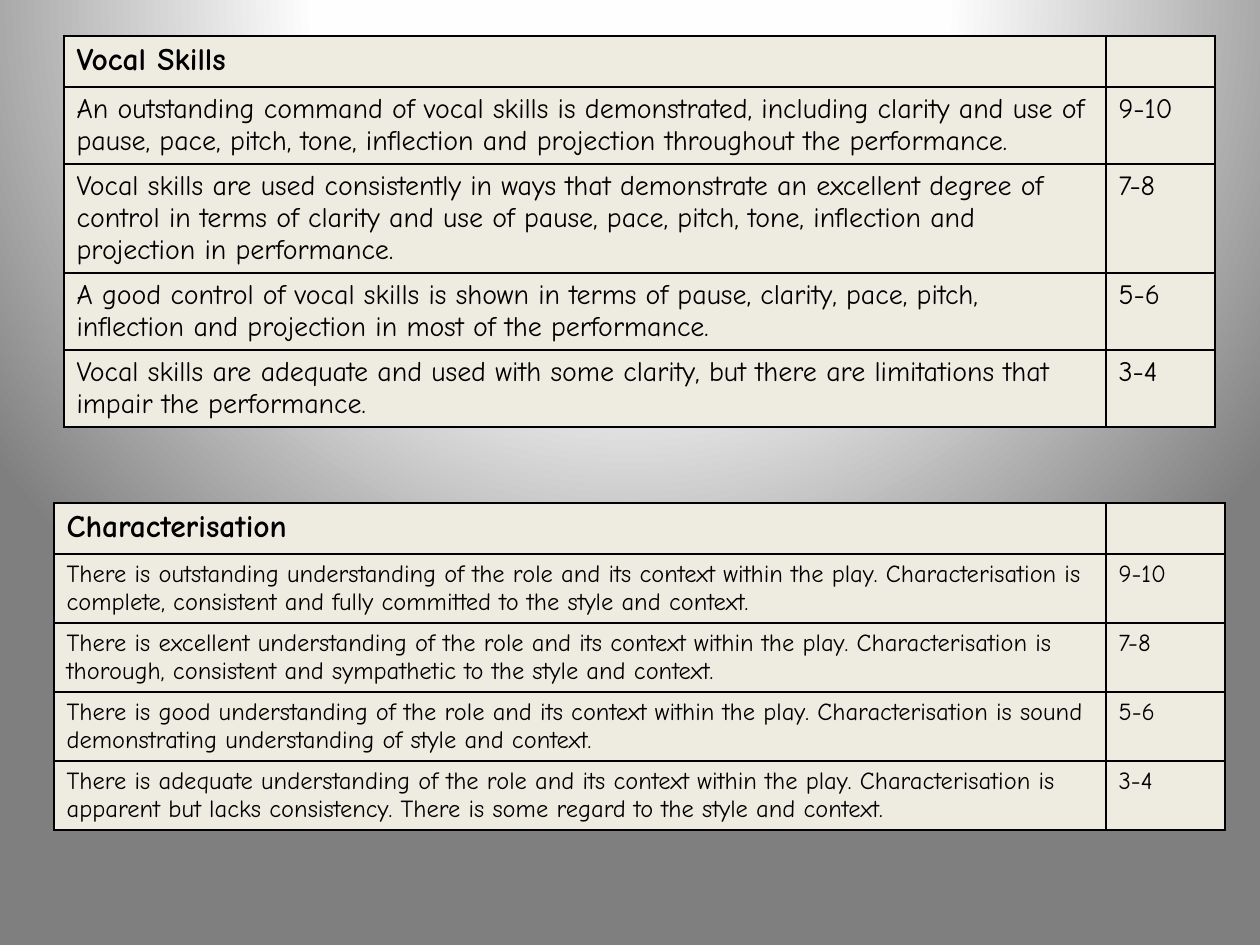
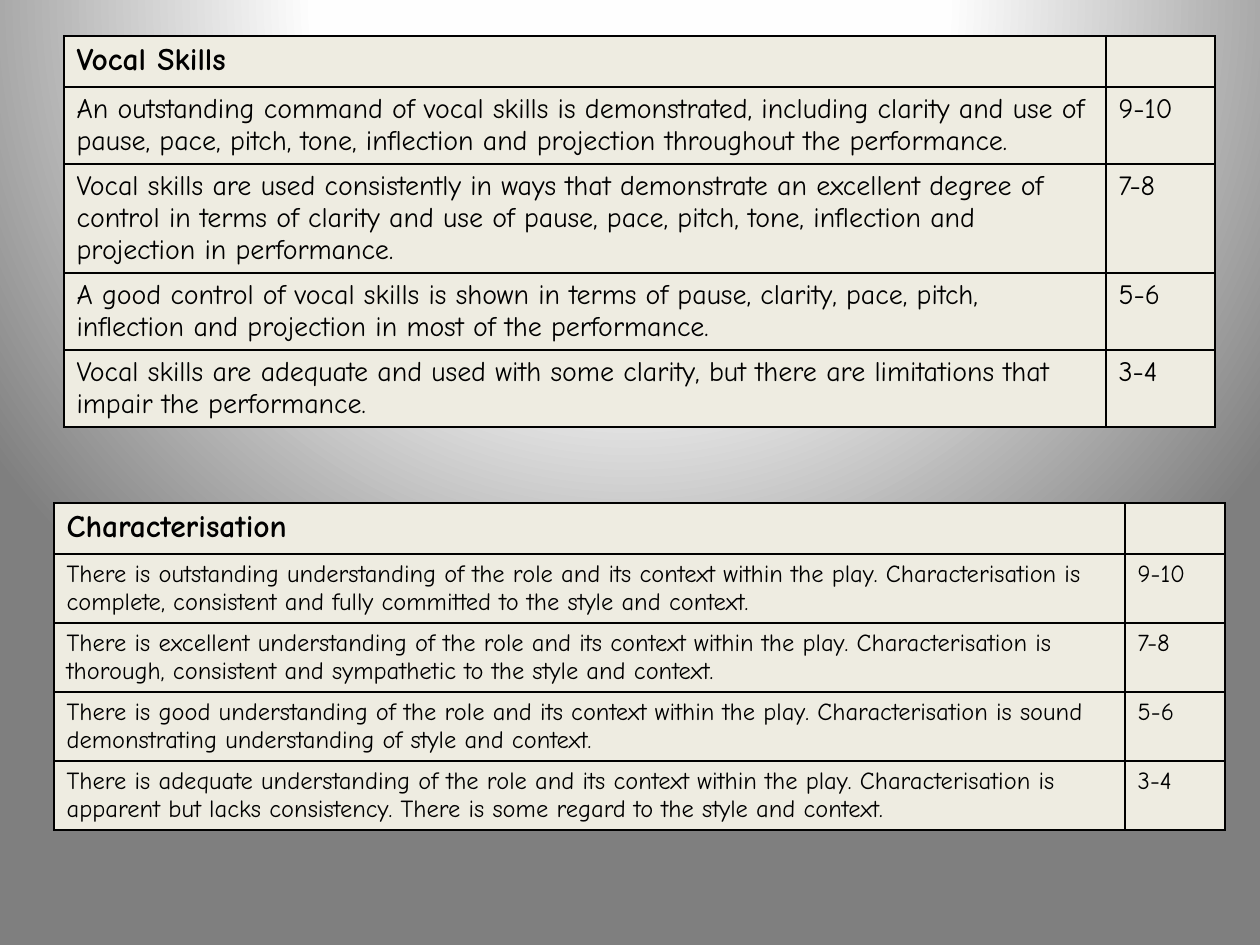
from pptx import Presentation
from pptx.dml.color import RGBColor
from pptx.oxml import parse_xml
from pptx.oxml.ns import nsdecls
from pptx.util import Emu, Pt

VOCAL = ("Vocal Skills", [
    ("An outstanding command of vocal skills is demonstrated, including clarity and use of "
     "pause, pace, pitch, tone, inflection and projection throughout the performance.", "9-10"),
    ("Vocal skills are used consistently in ways that demonstrate an excellent degree of "
     "control in terms of clarity and use of pause, pace, pitch, tone, inflection and "
     "projection in performance.", "7-8"),
    ("A good control of vocal skills is shown in terms of pause, clarity, pace, pitch, "
     "inflection and projection in most of the performance.", "5-6"),
    ("Vocal skills are adequate and used with some clarity, but there are limitations that "
     "impair the performance.", "3-4"),
])
CHARACTER = ("Characterisation", [
    ("There is outstanding understanding of the role and its context within the play. "
     "Characterisation is complete, consistent and fully committed to the style and context.",
     "9-10"),
    ("There is excellent understanding of the role and its context within the play. "
     "Characterisation is thorough, consistent and sympathetic to the style and context.",
     "7-8"),
    ("There is good understanding of the role and its context within the play. "
     "Characterisation is sound demonstrating understanding of style and context.", "5-6"),
    ("There is adequate understanding of the role and its context within the play. "
     "Characterisation is apparent but lacks consistency. There is some regard to the style "
     "and context.", "3-4"),
])
VOCAL_TABLE = (VOCAL, 64, 36, (1042, 109), 16)
SLIDES = [
    [VOCAL_TABLE, (CHARACTER, 54, 503, (1052, 119), 14)],
    [VOCAL_TABLE, (CHARACTER, 54, 503, (1071, 100), 14)],
]

FONT, INK, CREAM = "Comic Neue", "000000", "EEECE1"
BACKDROP = [(0, "FFFFFF"), (40, "FEFEFE"), (100, "7F7F7F")]
ROW_HEIGHT, HEADING_SIZE, BORDER = 51, 18, Pt(1)


def px(n):
    return Emu(round(n * 914400 / 126))


def rgb(value):
    return RGBColor.from_string(value)


def set_backdrop(master):
    stops = "".join(f'<a:gs pos="{pos * 1000}"><a:srgbClr val="{color}"/></a:gs>'
                    for pos, color in BACKDROP)
    c_sld = master.element.cSld
    if c_sld.bg is not None:
        c_sld.remove(c_sld.bg)
    c_sld.insert(0, parse_xml(
        f'<p:bg {nsdecls("p", "a")}><p:bgPr><a:gradFill rotWithShape="1">'
        f'<a:gsLst>{stops}</a:gsLst><a:path path="circle">'
        '<a:fillToRect l="50000" t="-80000" r="50000" b="180000"/></a:path>'
        '</a:gradFill><a:effectLst/></p:bgPr></p:bg>'))


def format_cell(cell, text, size, bold):
    cell.fill.solid()
    cell.fill.fore_color.rgb = rgb(CREAM)
    tc_pr = cell._tc.get_or_add_tcPr()
    for i, side in enumerate("LRTB"):
        tc_pr.insert(i, parse_xml(
            f'<a:ln{side} {nsdecls("a")} w="{BORDER}"><a:solidFill>'
            f'<a:srgbClr val="{INK}"/></a:solidFill></a:ln{side}>'))
    cell.text_frame.text = text
    for r in cell.text_frame.paragraphs[0].runs:
        r.font.name, r.font.size, r.font.bold = FONT, Pt(size), bold
        r.font.color.rgb = rgb(INK)


def add_rubric(slide, rubric, left, top, widths, size):
    heading, bands = rubric
    rows = [(heading, "")] + bands
    table = slide.shapes.add_table(len(rows), len(widths), px(left), px(top),
                                   px(sum(widths)), px(ROW_HEIGHT * len(rows))).table
    table.first_row = table.horz_banding = False
    for column, width in zip(table.columns, widths):
        column.width = px(width)
    for i, row in enumerate(rows):
        table.rows[i].height = px(ROW_HEIGHT)
        for j, text in enumerate(row):
            format_cell(table.cell(i, j), text, size if i else HEADING_SIZE, i == 0)


def main():
    prs = Presentation()
    prs.slide_width, prs.slide_height = px(1260), px(945)
    set_backdrop(prs.slide_master)
    for rubrics in SLIDES:
        slide = prs.slides.add_slide(prs.slide_layouts[6])
        for rubric in rubrics:
            add_rubric(slide, *rubric)
    prs.save("out.pptx")


if __name__ == "__main__":
    main()
